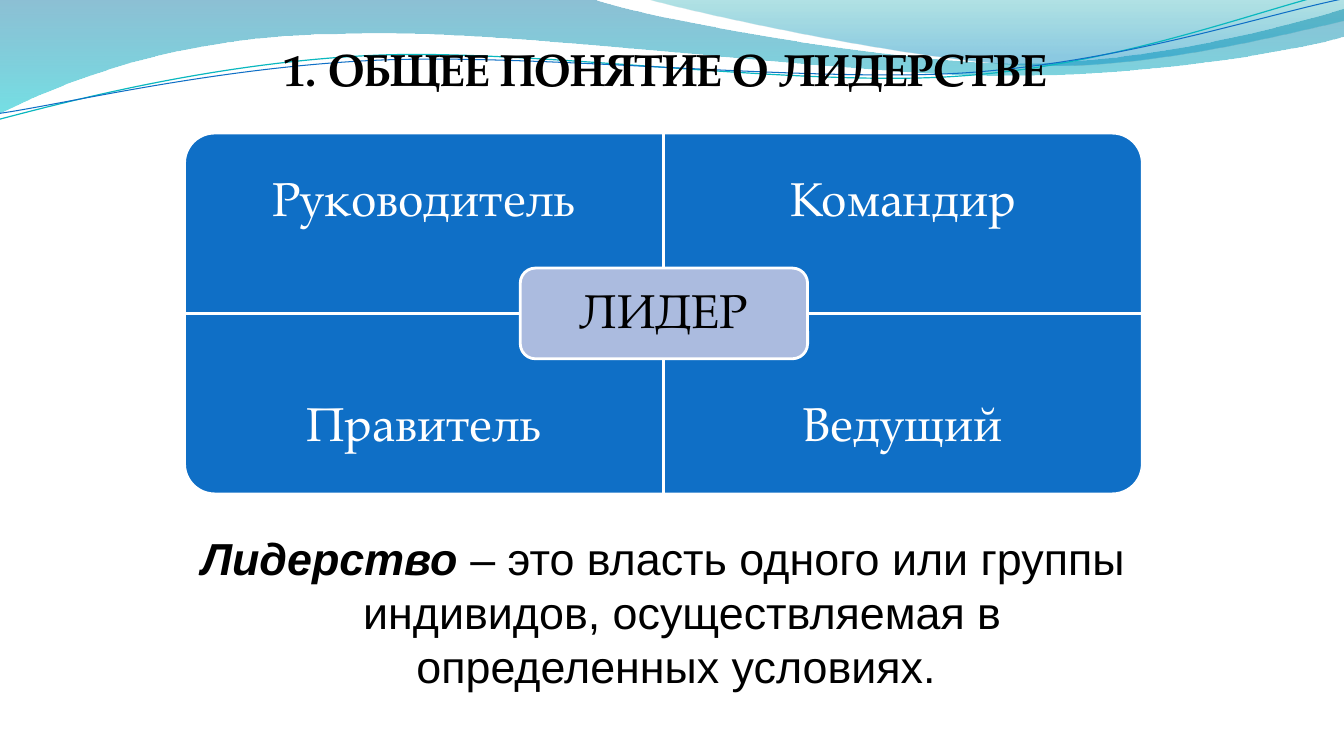
from dataclasses import dataclass

from lxml.etree import SubElement
from pptx import Presentation
from pptx.dml.color import RGBColor
from pptx.enum.shapes import MSO_SHAPE
from pptx.enum.text import MSO_ANCHOR, PP_ALIGN
from pptx.oxml.ns import qn
from pptx.util import Inches, Pt

COLORS = {
    "blue": "0F6FC6", "lavender": "ABBBDF", "cyan": "0AB8BF",
    "white": "FFFFFF", "black": "000000",
    "deep": "0074A1", "aqua": "00C6CF", "teal": "00A1A9", "azure": "008BBF",
}
SERIF = "TeX Gyre Pagella"
SANS = "Arial"
GRID_LEFT, GRID_TOP, CELL_WIDTH, CELL_HEIGHT = 1.83, 1.32, 4.75, 1.79
LABEL_HEIGHT = 1.34
LINE_TILT = 357.3

Point = tuple[float, float]


@dataclass
class Stop:
    position: float
    color: str
    opacity: int


@dataclass
class Wave:
    """Outline of pieces: one point is a straight line, three are a Bezier curve."""
    start: Point
    pieces: list[list[Point]]
    stops: tuple[Stop, ...] = ()
    line: str = ""
    width: float = 0


@dataclass
class Quadrant:
    text: str
    column: int
    row: int
    rotation: int


WAVES = [
    Wave((0, -0.01), [
        [(5.87, -0.01)],
        [(6.34, 0.17), (8.85, 0.63), (10.11, 0.63)],
        [(11.38, 0.63), (12.78, 0.26), (13.33, 0.09)],
        [(13.35, 0.36)],
        [(13.11, 0.44), (11.6, 0.76), (9.94, 0.75)],
        [(8.29, 0.75), (5.09, 0.28), (3.43, 0.34)],
        [(1.72, 0.35), (0.61, 0.83), (-0.01, 1.13)],
    ], stops=(Stop(0, "deep", 45), Stop(1, "aqua", 55))),
    Wave((6.39, -0.01), [
        [(6.79, 0.11), (9.09, 0.62), (10.25, 0.65)],
        [(11.41, 0.69), (12.82, 0.32), (13.33, 0.21)],
        [(13.33, 0)],
    ], stops=(Stop(0, "teal", 30), Stop(0.8, "azure", 45))),
    Wave((-0.03, 0.87), [
        [(0.63, 0.73), (2.11, 0.41), (3.69, 0.41)],
        [(5.28, 0.41), (7.88, 0.93), (9.49, 0.89)],
        [(11.09, 0.86), (12.54, 0.36), (13.33, 0.22)],
    ], line="cyan", width=0.85),
    Wave((-0.02, 0.81), [
        [(0.62, 0.75), (2.18, 0.45), (3.78, 0.46)],
        [(5.37, 0.47), (7.95, 0.88), (9.54, 0.86)],
        [(11.14, 0.83), (12.56, 0.42), (13.36, 0.3)],
    ], line="blue", width=0.75),
]
QUADRANTS = [
    Quadrant("Руководитель", 0, 0, 270),
    Quadrant("Командир", 1, 0, 0),
    Quadrant("Правитель", 0, 1, 180),
    Quadrant("Ведущий", 1, 1, 90),
]


def rgb(name: str) -> RGBColor:
    return RGBColor.from_string(COLORS[name])


def curve_outline(shape, pieces: list[list[Point]]) -> None:
    """Turn each run of three straight segments that forms a piece into one curve."""
    segments = iter(list(shape.element.iter(qn("a:lnTo"))))
    for piece in pieces:
        group = [next(segments) for _ in piece]
        if len(group) == 1:
            continue
        outline = group[0].getparent()
        curve = SubElement(outline, qn("a:cubicBezTo"))
        outline.replace(group[0], curve)
        for segment in group:
            curve.append(segment[0])
        for segment in group[1:]:
            outline.remove(segment)


def add_wave(page, wave: Wave) -> None:
    start_x, start_y = wave.start
    builder = page.shapes.build_freeform(Inches(start_x), Inches(start_y))
    builder.add_line_segments([(Inches(x), Inches(y)) for piece in wave.pieces
                               for x, y in piece], close=bool(wave.stops))
    shape = builder.convert_to_shape()
    curve_outline(shape, wave.pieces)
    shape.shadow.inherit = False
    if not wave.stops:
        shape.rotation = LINE_TILT
        shape.fill.background()
        shape.line.color.rgb = rgb(wave.line)
        shape.line.width = Pt(wave.width)
        return
    shape.line.fill.background()
    shape.fill.gradient()
    shape.fill.gradient_angle = 270
    for target, stop in zip(shape.fill.gradient_stops, wave.stops):
        target.position = stop.position
        target.color.rgb = rgb(stop.color)
    for color, stop in zip(shape.element.spPr.iter(qn("a:srgbClr")), wave.stops):
        SubElement(color, qn("a:alpha"), val=str(stop.opacity * 1000))


def add_panel(page, kind: MSO_SHAPE, left: float, top: float, width: float,
              height: float, fill: str, rotation: int = 0):
    """Place a panel whose given bounds are those after its rotation."""
    center_x, center_y = left + width / 2, top + height / 2
    if rotation % 180:
        width, height = height, width
    panel = page.shapes.add_shape(kind, Inches(center_x - width / 2),
                                  Inches(center_y - height / 2),
                                  Inches(width), Inches(height))
    panel.rotation = rotation
    panel.shadow.inherit = False
    panel.fill.solid()
    panel.fill.fore_color.rgb = rgb(fill)
    panel.line.color.rgb = rgb("white")
    panel.line.width = Pt(2)
    return panel


def add_text_box(page, left: float, top: float, width: float, height: float):
    return page.shapes.add_textbox(Inches(left), Inches(top), Inches(width), Inches(height))


def add_span(para, text: str, *, size: float, font: str, color: str,
             bold: bool = False, italic: bool = False) -> None:
    span = para.add_run()
    span.text = text
    span.font.size = Pt(size)
    span.font.name = font
    span.font.color.rgb = rgb(color)
    span.font.bold = bold
    span.font.italic = italic


def set_label(box, text: str, color: str, inset: float) -> None:
    frame = box.text_frame
    frame.word_wrap = True
    frame.vertical_anchor = MSO_ANCHOR.MIDDLE
    frame.margin_left = frame.margin_right = Inches(inset)
    frame.margin_top = frame.margin_bottom = Inches(inset)
    para = frame.paragraphs[0]
    para.alignment = PP_ALIGN.CENTER
    para.line_spacing = 0.9
    para.space_after = Pt(12)
    add_span(para, text, size=34, font=SERIF, color=color)


def add_quadrant(page, quadrant: Quadrant) -> None:
    left = GRID_LEFT + quadrant.column * CELL_WIDTH
    top = GRID_TOP + quadrant.row * CELL_HEIGHT
    add_panel(page, MSO_SHAPE.ROUND_1_RECTANGLE, left, top, CELL_WIDTH, CELL_HEIGHT,
              "blue", quadrant.rotation)
    label_top = top + quadrant.row * (CELL_HEIGHT - LABEL_HEIGHT)
    label = add_text_box(page, left, label_top, CELL_WIDTH, LABEL_HEIGHT)
    set_label(label, quadrant.text, "white", 0.26)


def add_definition(page) -> None:
    frame = add_text_box(page, GRID_LEFT, 5.22, 2 * CELL_WIDTH, 2.28).text_frame
    frame.word_wrap = True
    para = frame.paragraphs[0]
    para.alignment = PP_ALIGN.CENTER
    para.space_before = Pt(6.4)
    properties = para._p.get_or_add_pPr()
    properties.set("marL", str(Inches(0.38)))
    properties.set("indent", str(Inches(-0.38)))
    add_span(para, "Лидерство", size=32, font=SANS, color="black", bold=True, italic=True)
    add_span(para, " – это власть одного или группы индивидов, осуществляемая в "
             "определенных условиях. ", size=32, font=SANS, color="black")


def set_title(page, text: str) -> None:
    title = page.shapes.title
    title.left, title.top = Inches(2.71), Inches(0.36)
    title.width, title.height = Inches(8.06), Inches(0.64)
    frame = title.text_frame
    frame.word_wrap = False
    frame.vertical_anchor = MSO_ANCHOR.TOP
    para = frame.paragraphs[0]
    para.alignment = PP_ALIGN.LEFT
    add_span(para, text, size=32, font=SERIF, color="black", bold=True)
    page.shapes.element.append(title.element)  # bring in front of the waves


def main() -> None:
    deck = Presentation()
    deck.slide_width, deck.slide_height = Inches(13.33), Inches(7.5)
    page = deck.slides.add_slide(deck.slide_layouts[5])
    for wave in WAVES:
        add_wave(page, wave)
    for quadrant in QUADRANTS:
        add_quadrant(page, quadrant)
    leader = add_panel(page, MSO_SHAPE.ROUNDED_RECTANGLE, 5.16, 2.66, 2.85, 0.9, "lavender")
    set_label(leader, "ЛИДЕР", "black", 0.18)
    add_definition(page)
    set_title(page, "1. ОБЩЕЕ ПОНЯТИЕ О ЛИДЕРСТВЕ")
    deck.save("out.pptx")


if __name__ == "__main__":
    main()
